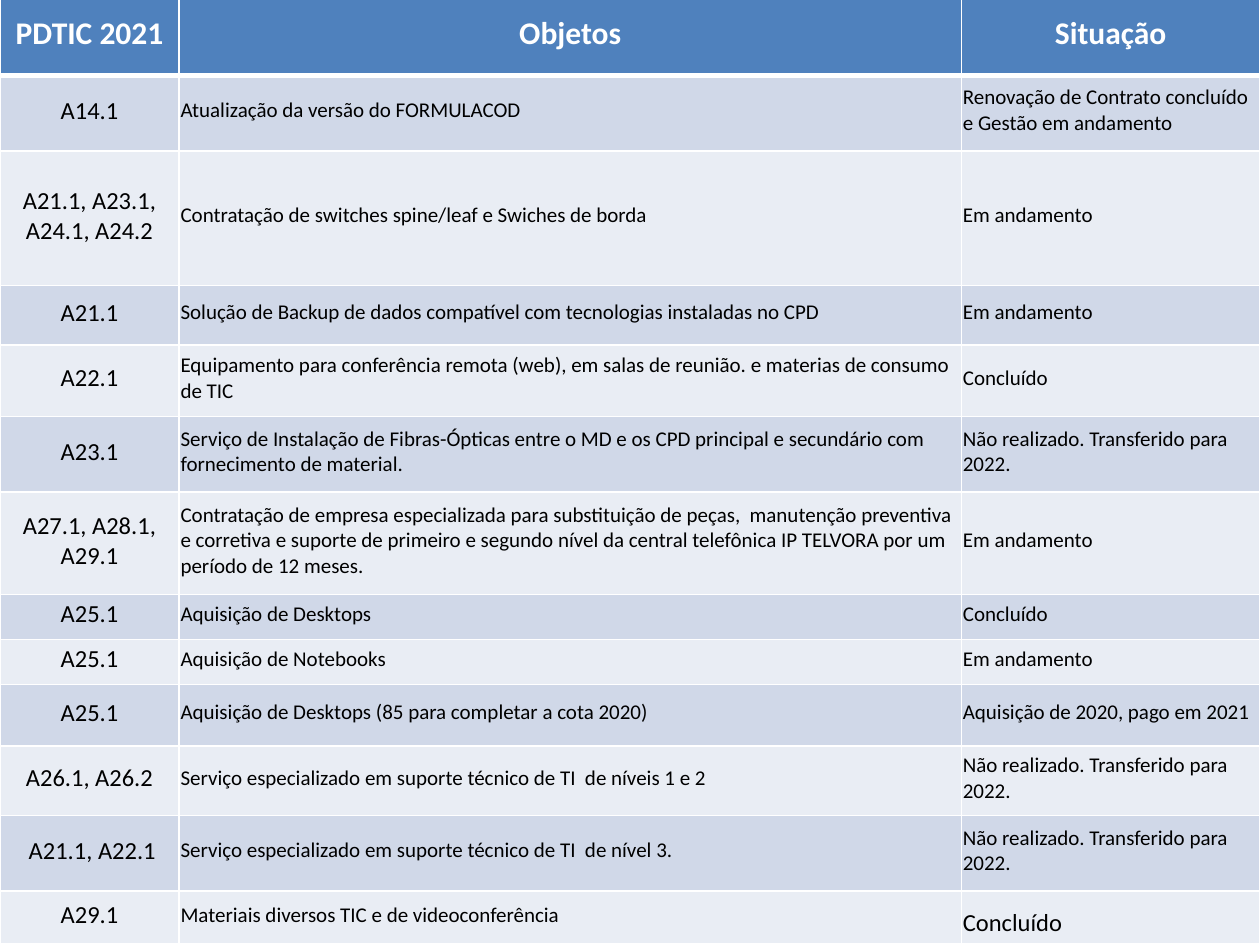
from lxml import etree
from pptx import Presentation
from pptx.dml.color import RGBColor
from pptx.enum.text import MSO_ANCHOR, PP_ALIGN
from pptx.oxml.ns import qn
from pptx.util import Cm, Pt

CENTER, LEFT = PP_ALIGN.CENTER, PP_ALIGN.LEFT
MIDDLE, BOTTOM = MSO_ANCHOR.MIDDLE, MSO_ANCHOR.BOTTOM

COLORS = {
    "header": "4F81BD",
    "band_dark": "D0D8E8",
    "band_light": "E9EDF4",
    "border": "FFFFFF",
    "header_text": "FFFFFF",
    "body_text": "000000",
}
FONT_NAME = "Calibri"
THIN, THICK = Pt(1), Pt(3)

CELL_FORMAT = {
    "margin_left": Cm(0.03),
    "margin_top": Cm(0.03),
    "margin_right": Cm(0.03),
    "margin_bottom": Cm(0.13),
    "vertical_anchor": MIDDLE,
}
HEADER_FONT = {"name": FONT_NAME, "size": Pt(18), "bold": True}
CODE_FONT = {"name": FONT_NAME, "size": Pt(14), "bold": False}
DETAIL_FONT = {"name": FONT_NAME, "size": Pt(12), "bold": False}

COLUMN_WIDTHS = [3.61, 15.77, 6.02]
HEADER_HEIGHT = 1.57
HEADINGS = ["PDTIC 2021", "Objetos", "Situação"]
ACTIONS = [
    (1.52, "A14.1", "Atualização da versão do FORMULACOD",
     "Renovação de Contrato concluído e Gestão em andamento"),
    (2.72, "A21.1, A23.1, A24.1, A24.2",
     "Contratação de switches spine/leaf e Swiches de borda", "Em andamento"),
    (1.19, "A21.1",
     "Solução de Backup de dados compatível com tecnologias instaladas no CPD",
     "Em andamento"),
    (1.45, "A22.1",
     "Equipamento para conferência remota (web), em salas de reunião. "
     "e materias de consumo de TIC", "Concluído"),
    (1.52, "A23.1",
     "Serviço de Instalação de Fibras-Ópticas entre o MD e os CPD principal "
     "e secundário com fornecimento de material.",
     "Não realizado. Transferido para 2022."),
    (2.06, "A27.1, A28.1, A29.1",
     "Contratação de empresa especializada para substituição de peças,  "
     "manutenção preventiva e corretiva e suporte de primeiro e segundo nível "
     "da central telefônica IP TELVORA por um período de 12 meses.",
     "Em andamento"),
    (0.91, "A25.1", "Aquisição de Desktops", "Concluído"),
    (0.91, "A25.1", "Aquisição de Notebooks", "Em andamento"),
    (1.24, "A25.1", "Aquisição de Desktops (85 para completar a cota 2020)",
     "Aquisição de 2020, pago em 2021"),
    (1.4, "A26.1, A26.2",
     "Serviço especializado em suporte técnico de TI  de níveis 1 e 2",
     "Não realizado. Transferido para 2022."),
    (1.52, " A21.1, A22.1",
     "Serviço especializado em suporte técnico de TI  de nível 3.",
     "Não realizado. Transferido para 2022."),
    (1.07, "A29.1", "Materiais diversos TIC e de videoconferência", "Concluído"),
]


def apply_format(target, values):
    for attribute, value in values.items():
        setattr(target, attribute, value)


def set_borders(cell, top, bottom):
    properties = cell._tc.get_or_add_tcPr()
    widths = {"a:lnL": THIN, "a:lnR": THIN, "a:lnT": top, "a:lnB": bottom}
    for side, width in widths.items():
        line = etree.SubElement(properties, qn(side), w=str(width))
        fill = etree.SubElement(line, qn("a:solidFill"))
        etree.SubElement(fill, qn("a:srgbClr"), val=COLORS["border"])


def fill_cell(cell, text, font, alignment, text_color, background,
              top=THIN, bottom=THIN):
    apply_format(cell, CELL_FORMAT)
    set_borders(cell, top, bottom)
    cell.fill.solid()
    cell.fill.fore_color.rgb = RGBColor.from_string(COLORS[background])
    paragraph = cell.text_frame.paragraphs[0]
    paragraph.alignment = alignment
    run = paragraph.add_run()
    run.text = text
    apply_format(run.font, font)
    run.font.color.rgb = RGBColor.from_string(COLORS[text_color])


def add_action_table(slide):
    heights = [HEADER_HEIGHT] + [action[0] for action in ACTIONS]
    table = slide.shapes.add_table(
        len(heights), len(COLUMN_WIDTHS), Cm(0), Cm(-0.05),
        Cm(sum(COLUMN_WIDTHS)), Cm(sum(heights))).table
    for column, width in zip(table.columns, COLUMN_WIDTHS):
        column.width = Cm(width)
    for row, height in zip(table.rows, heights):
        row.height = Cm(height)
    return table


def fill_header(table):
    for column, heading in enumerate(HEADINGS):
        fill_cell(table.cell(0, column), heading, HEADER_FONT, CENTER,
                  "header_text", "header", bottom=THICK)


def fill_actions(table):
    for row, (_, *texts) in enumerate(ACTIONS, start=1):
        band = "band_dark" if row % 2 else "band_light"
        top = THICK if row == 1 else THIN
        for column, text in enumerate(texts):
            font, alignment = (DETAIL_FONT, LEFT) if column else (CODE_FONT, CENTER)
            fill_cell(table.cell(row, column), text, font, alignment,
                      "body_text", band, top=top)
    final_status = table.cell(len(ACTIONS), 2)
    final_status.vertical_anchor = BOTTOM
    apply_format(final_status.text_frame.paragraphs[0].runs[0].font, CODE_FONT)


def main():
    presentation = Presentation()
    presentation.slide_width = Cm(25.4)
    presentation.slide_height = Cm(19.05)
    slide = presentation.slides.add_slide(presentation.slide_layouts[6])
    table = add_action_table(slide)
    fill_header(table)
    fill_actions(table)
    presentation.save("out.pptx")


if __name__ == "__main__":
    main()
